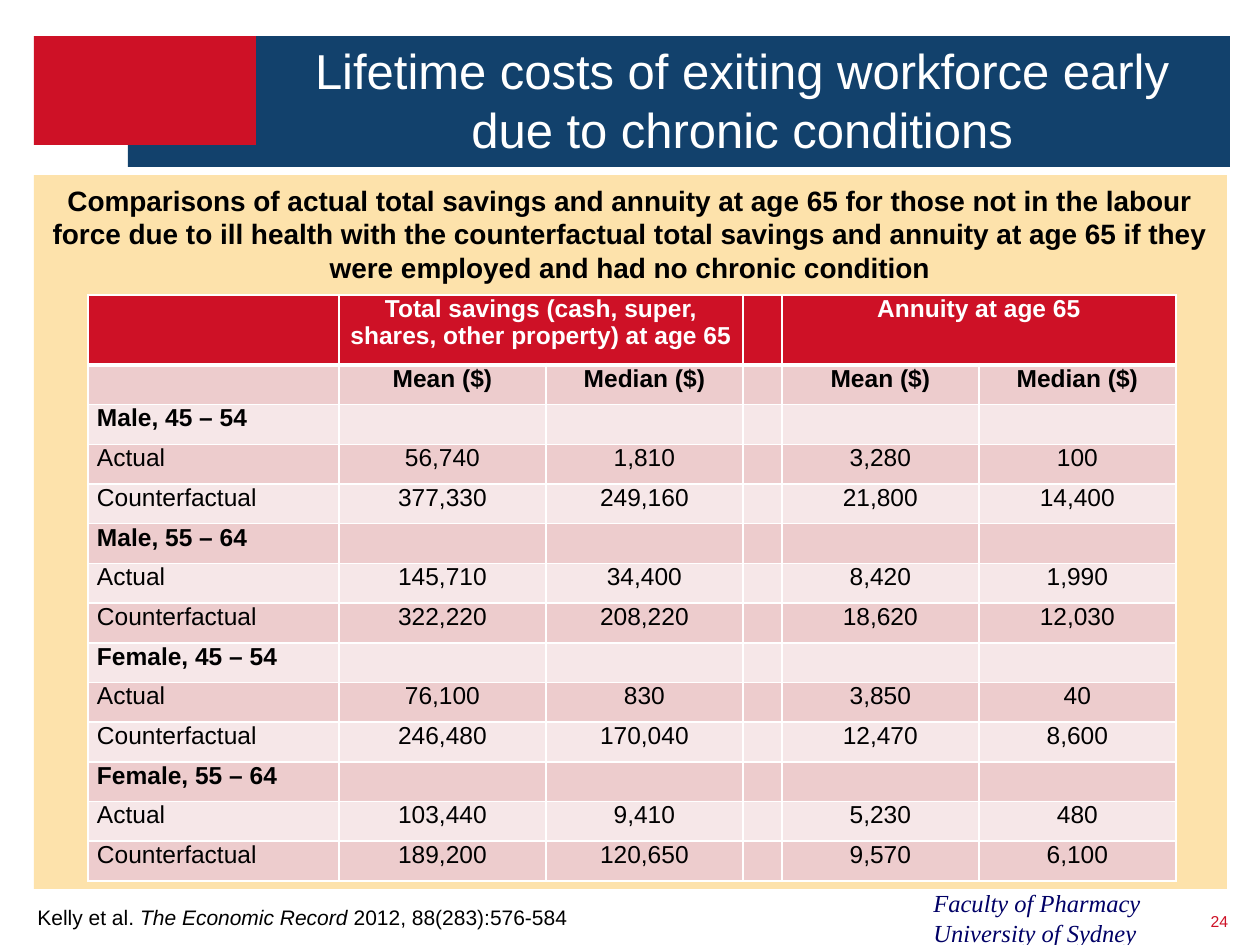
from pptx import Presentation
from pptx.dml.color import RGBColor
from pptx.enum.shapes import MSO_SHAPE
from pptx.enum.text import MSO_ANCHOR as ANCHOR, MSO_AUTO_SIZE as AUTO, PP_ALIGN as ALIGN
from pptx.oxml import parse_xml
from pptx.oxml.ns import nsdecls
from pptx.util import Pt

# Content
TITLE = "Lifetime costs of exiting workforce early due to chronic conditions"
INTRO = (
    "Comparisons of actual total savings and annuity at age 65 for those not in the "
    "labour force due to ill health with the counterfactual total savings and annuity "
    "at age 65 if they were employed and had no chronic condition"
)
FACULTY = (("Faculty of Pharmacy", False), ("University of Sydney", False))
SOURCE = (("Kelly et al. ", False), ("The Economic Record", True),
          (" 2012, 88(283):576-584", False))
PAGE = "24"
MEASURES = {1: "Total savings (cash, super, shares, other property) at age 65",
            4: "Annuity at age 65"}  # first column of each pair -> heading
STATISTICS = ("Mean ($)", "Median ($)")
GROUPS = {  # savings mean, savings median, annuity mean, annuity median
    "Male, 45 – 54": {"Actual": ("56,740", "1,810", "3,280", "100"),
                      "Counterfactual": ("377,330", "249,160", "21,800", "14,400")},
    "Male, 55 – 64": {"Actual": ("145,710", "34,400", "8,420", "1,990"),
                      "Counterfactual": ("322,220", "208,220", "18,620", "12,030")},
    "Female, 45 – 54": {"Actual": ("76,100", "830", "3,850", "40"),
                        "Counterfactual": ("246,480", "170,040", "12,470", "8,600")},
    "Female, 55 – 64": {"Actual": ("103,440", "9,410", "5,230", "480"),
                        "Counterfactual": ("189,200", "120,650", "9,570", "6,100")},
}

THEME = {
    "navy": "12416C", "red": "CE1126", "cream": "FDE2AB", "white": "FFFFFF",
    "black": "000000", "footer": "000066", "bands": ("EDCCCD", "F6E7E8"),
    "sans": "Arial", "serif": "Times New Roman",
    "title": 28, "intro": 16, "body": 14, "source": 12, "page": 9,
}

# Geometry in px, 126 to the inch
SLIDE = (1260, 945)
BARS = (("navy", (128, 36, 1102, 131)), ("red", (34, 36, 222, 109)),
        ("cream", (34, 175, 1193, 714)))
TITLE_BOX = (256, 78, 972, 87)
INTRO_BOX = (39, 177, 1182, 115)
FACULTY_BOX = (921, 882, 294, 72)
SOURCE_BOX = (25, 898, 559, 38)
PAGE_BOX = (1194, 907, 34, 29)
TABLE_BOX = (88, 295, 1088, 586)
COLUMNS = (251, 207, 197, 39, 197, 197)
HEADER_HEIGHT = 70
CELL_MARGIN = 9


def px(n):
    return round(n * 914400 / 126)


def emu(box):
    return [px(n) for n in box]


def rgb(name):
    return RGBColor.from_string(THEME.get(name, name))


def style(p, size, color="black", bold=False, italic=False, face="sans", align=ALIGN.LEFT):
    p.alignment = align
    f = p.font
    f.name, f.size, f.bold, f.italic = THEME[face], Pt(THEME[size]), bold, italic
    f.color.rgb = rgb(color)


def add_text(slide, box, runs, size, wrap=True, stacked=False, **look):
    """Add a text box of (text, italic) runs; stacked puts each run on its own line."""
    tf = slide.shapes.add_textbox(*emu(box)).text_frame
    tf.word_wrap = wrap
    p = tf.paragraphs[0]
    style(p, size, **look)
    for i, (text, italic) in enumerate(runs):
        if stacked and i:
            p.add_line_break()
        r = p.add_run()
        r.text = text
        if italic:
            r.font.italic = True
    return tf


def set_borders(cell, top, bottom):
    tcPr = cell._tc.get_or_add_tcPr()
    for side, width in (("L", 1), ("R", 1), ("T", top), ("B", bottom)):
        tcPr.append(parse_xml(
            f'<a:ln{side} {nsdecls("a")} w="{Pt(width)}"><a:solidFill>'
            f'<a:srgbClr val="{THEME["white"]}"/></a:solidFill></a:ln{side}>'))


def table_rows():
    """Yield (cell texts, bold) for every row, with the spacer column left blank."""
    yield [MEASURES.get(c, "") for c in range(len(COLUMNS))], True
    yield ["", *STATISTICS, "", *STATISTICS], True
    for group, cases in GROUPS.items():
        yield [group] + [""] * (len(COLUMNS) - 1), True
        for case, values in cases.items():
            yield [case, *values[:2], "", *values[2:]], False


def add_savings_table(slide):
    rows = list(table_rows())
    table = slide.shapes.add_table(len(rows), len(COLUMNS), *emu(TABLE_BOX)).table
    table.horz_banding = False
    for column, width in zip(table.columns, COLUMNS):
        column.width = px(width)
    row_height = (TABLE_BOX[3] - HEADER_HEIGHT) / (len(rows) - 1)
    for i, (texts, bold) in enumerate(rows):
        header = i == 0
        table.rows[i].height = px(HEADER_HEIGHT if header else row_height)
        for j, text in enumerate(texts):
            cell = table.cell(i, j)
            cell.margin_left = cell.margin_right = px(CELL_MARGIN)
            cell.margin_top = cell.margin_bottom = 0
            set_borders(cell, 3 if i == 1 else 1, 3 if header else 1)
            cell.fill.solid()
            cell.fill.fore_color.rgb = rgb("red" if header else THEME["bands"][(i - 1) % 2])
            cell.text = text
            style(cell.text_frame.paragraphs[0], "body", "white" if header else "black",
                  bold, align=ALIGN.CENTER if j else ALIGN.LEFT)
    for c in MEASURES:
        table.cell(0, c).merge(table.cell(0, c + 1))


def main():
    prs = Presentation()
    prs.slide_width, prs.slide_height = emu(SLIDE)
    slide = prs.slides.add_slide(prs.slide_layouts[5])

    # Banner and panel
    for color, box in BARS:
        s = slide.shapes.add_shape(MSO_SHAPE.RECTANGLE, *emu(box))
        s.shadow.inherit = False
        s.fill.solid()
        s.fill.fore_color.rgb = rgb(color)
        s.line.fill.background()

    # Title, raised above the banner
    title = slide.shapes.title
    title.left, title.top, title.width, title.height = emu(TITLE_BOX)
    tf = title.text_frame
    tf.text = TITLE
    tf.auto_size, tf.vertical_anchor = AUTO.NONE, ANCHOR.BOTTOM
    style(tf.paragraphs[0], "title", "white", align=ALIGN.CENTER)
    slide.shapes._spTree.append(title._element)

    # Introduction and table
    add_text(slide, INTRO_BOX, [(INTRO, False)], "intro", bold=True, align=ALIGN.CENTER)
    add_savings_table(slide)

    # Footer
    add_text(slide, FACULTY_BOX, FACULTY, "body", stacked=True,
             color="footer", italic=True, face="serif")
    add_text(slide, SOURCE_BOX, SOURCE, "source", wrap=False)
    tf = add_text(slide, PAGE_BOX, [(PAGE, False)], "page", color="red", align=ALIGN.RIGHT)
    tf.margin_left = tf.margin_right = tf.margin_top = tf.margin_bottom = 0
    tf.vertical_anchor = ANCHOR.MIDDLE

    prs.save("out.pptx")


if __name__ == "__main__":
    main()
